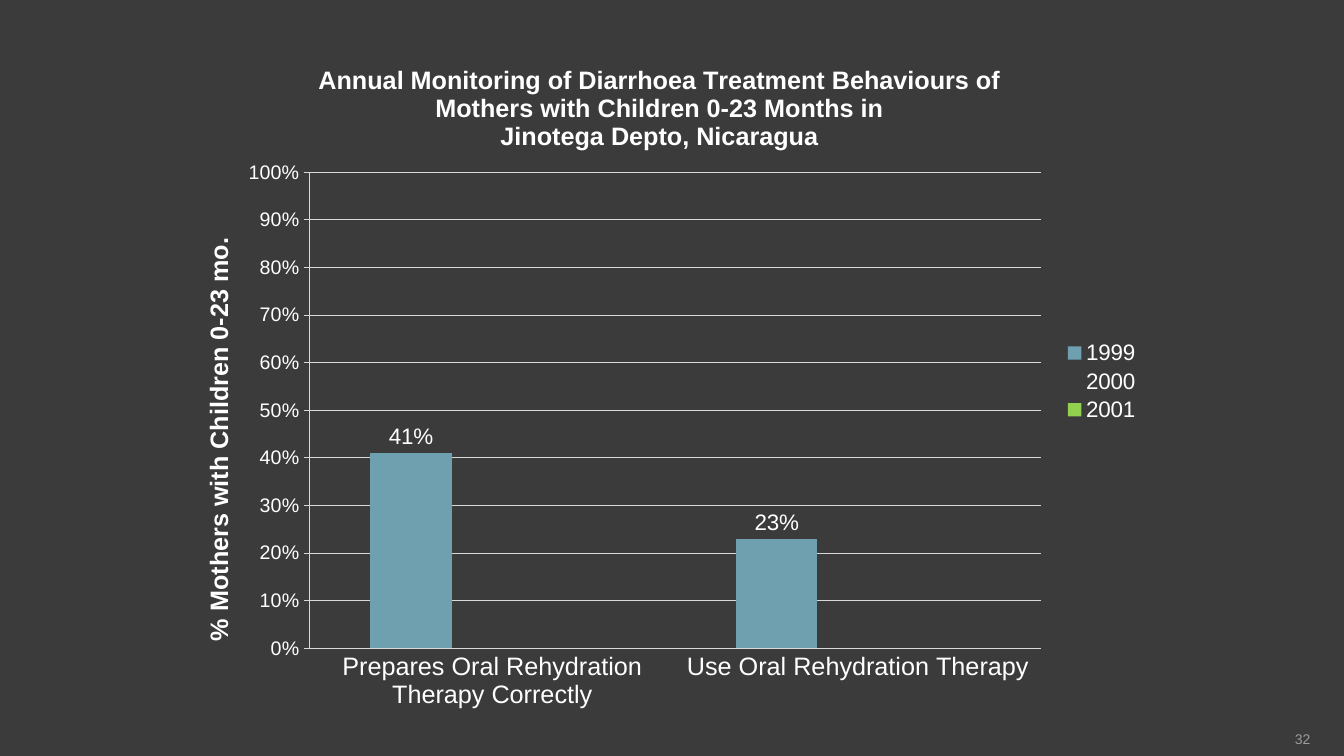
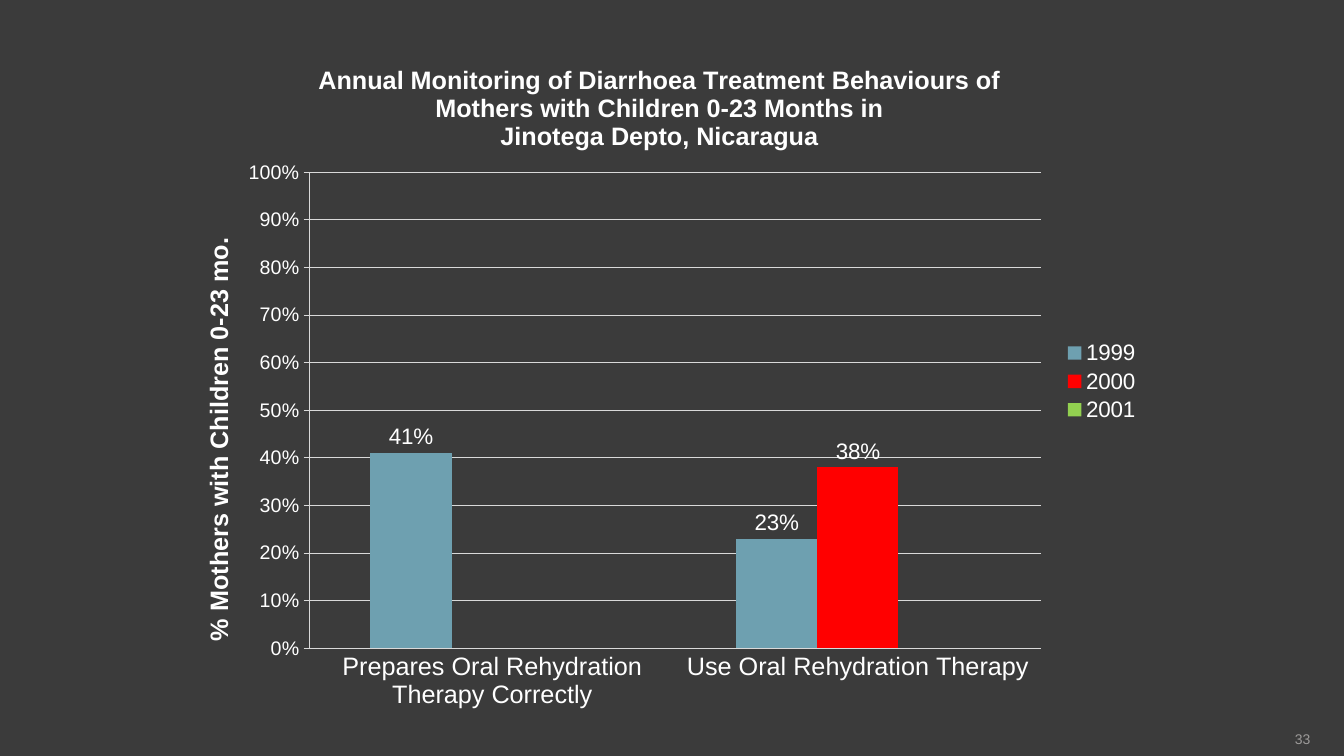
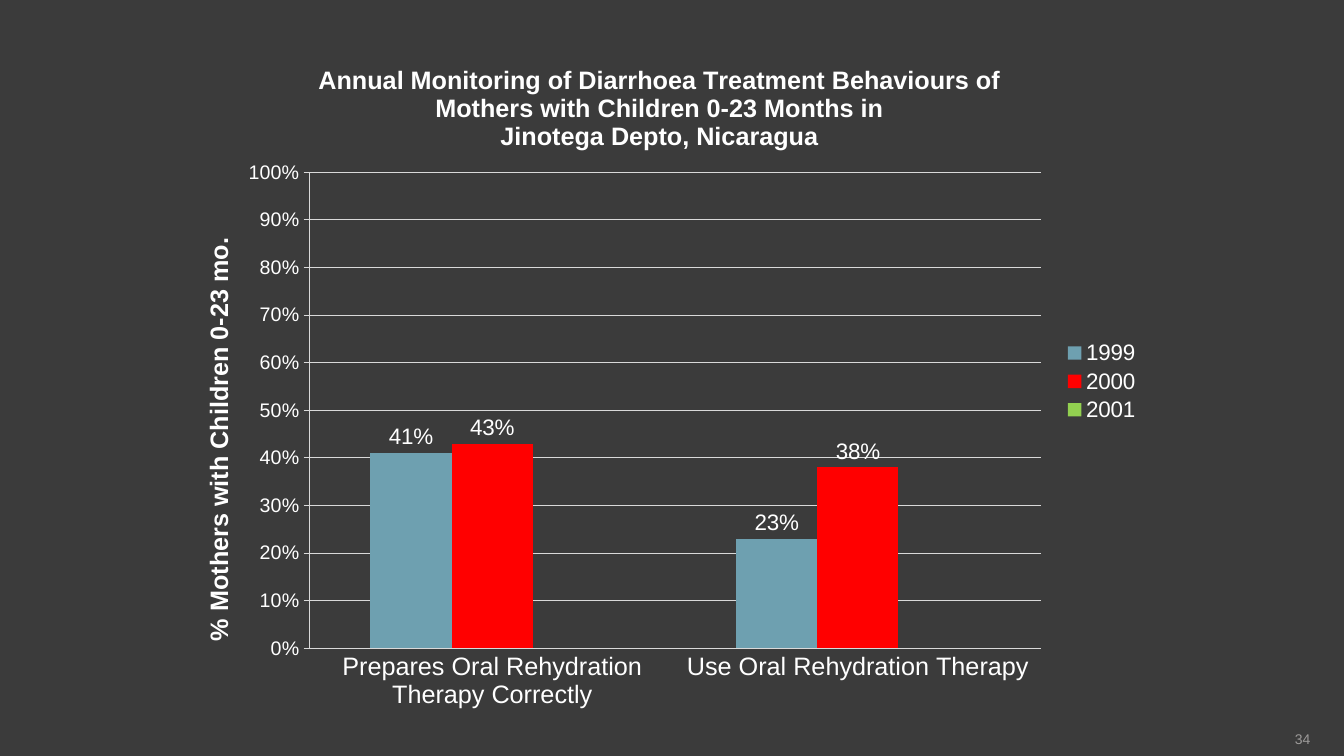
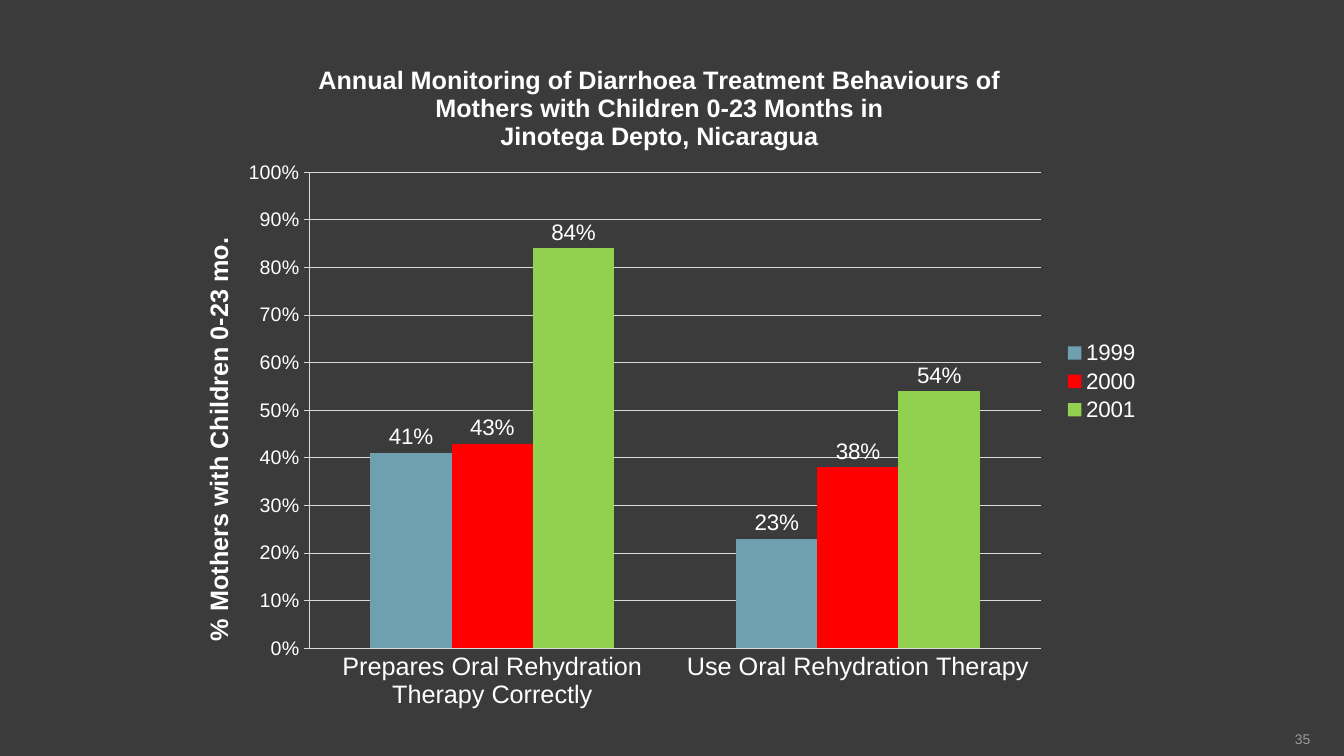
from lxml import etree
from pptx import Presentation
from pptx import util as u
from pptx.chart.data import CategoryChartData
from pptx.dml.color import RGBColor
from pptx.enum import chart as ch, text
from pptx.oxml.ns import qn

DARK = RGBColor(0x3B, 0x3B, 0x3B)
WHITE = RGBColor(0xFF, 0xFF, 0xFF)
GREY = RGBColor(0x9D, 0x9B, 0x9A)
RULE = RGBColor(0xD9, 0xD9, 0xD9)
BLUE = RGBColor(0x6E, 0xA0, 0xB0)
RED = RGBColor(0xFF, 0x00, 0x00)
GREEN = RGBColor(0x92, 0xD0, 0x50)

FONT = "Arial"
COLS, ROWS = 80, 45
FIRST = 32
TITLE = ("Annual Monitoring of Diarrhoea Treatment Behaviours of "
         "Mothers with Children 0-23 Months in\nJinotega Depto, Nicaragua")
SIDE = "% Mothers with Children 0-23 mo."
CATS = ("Prepares Oral Rehydration Therapy Correctly",
        "Use Oral Rehydration Therapy")
YEARS = ("1999", "2000", "2001")
BLANK = (None, None)
OLD, MID, NEW = (0.41, 0.23), (0.43, 0.38), (0.84, 0.54)

# Values by year, and the colour of the year 2000, for each slide
STEPS = (
    ((OLD, (None, 0.38), BLANK), None),
    ((OLD, (None, 0.38), BLANK), RED),
    ((OLD, MID, BLANK), RED),
    ((OLD, MID, NEW), RED),
)


def style(font, size, color=WHITE, bold=False):
    font.name = FONT
    font.size = u.Pt(size)
    font.bold = bold
    font.color.rgb = color


def write(frame, words, align=text.PP_ALIGN.CENTER, **form):
    frame.text = words
    for para in frame.paragraphs:
        para.alignment = align
        for run in para.runs:
            style(run.font, **form)


def place(part, x, y, w=None, h=None):
    """Fix a chart part at shares of the chart's size."""
    for old in part.findall(qn("c:layout")):
        part.remove(old)
    lay = etree.Element(qn("c:layout"))
    man = etree.SubElement(lay, qn("c:manualLayout"))
    sized = w is not None
    if sized and part.tag == qn("c:plotArea"):
        etree.SubElement(man, qn("c:layoutTarget")).set("val", "inner")
    for key in ("xMode", "yMode"):
        etree.SubElement(man, qn("c:" + key)).set("val", "edge")
    for key, val in zip("xywh", (x, y, w, h)):
        if val is not None:
            etree.SubElement(man, qn("c:" + key)).set("val", str(val))
    lead = part.xpath("./c:tx | ./c:legendPos")
    part.insert(len(lead), lay)


class Deck:
    def __init__(self):
        self.prs = Presentation()
        self.prs.slide_width = u.Inches(13.33)
        self.prs.slide_height = u.Inches(7.5)
        fill = self.prs.slide_master.background.fill
        fill.solid()
        fill.fore_color.rgb = DARK
        self.slide = None

    def box(self, col, row, wide, high):
        """Turn grid units into lengths."""
        dx = self.prs.slide_width / COLS
        dy = self.prs.slide_height / ROWS
        return [u.Emu(round(n)) for n in
                (col * dx, row * dy, wide * dx, high * dy)]

    def page(self, num):
        self.slide = self.prs.slides.add_slide(self.prs.slide_layouts[6])
        frame = self.slide.shapes.add_textbox(
            *self.box(71.33, 42.1, 6.67, 2.4)).text_frame
        frame.margin_left = frame.margin_right = 0
        frame.margin_top = frame.margin_bottom = 0
        frame.word_wrap = True
        frame.vertical_anchor = text.MSO_ANCHOR.BOTTOM
        write(frame, str(num), align=text.PP_ALIGN.RIGHT, size=10, color=GREY)

    def chart(self, rows, mid):
        data = CategoryChartData(number_format="0%")
        data.categories = CATS
        for year, vals in zip(YEARS, rows):
            data.add_series(year, vals)
        chart = self.slide.shapes.add_chart(
            ch.XL_CHART_TYPE.COLUMN_CLUSTERED,
            *self.box(10, 2, 58.5, 41), data).chart
        style(chart.font, 10)
        chart.has_title = True
        write(chart.chart_title.text_frame, TITLE, size=18, bold=True)
        chart.has_legend = True
        chart.legend.position = ch.XL_LEGEND_POSITION.RIGHT
        chart.legend.include_in_layout = False
        style(chart.legend.font, 16)
        self.axes(chart)
        self.bars(chart.plots[0], (BLUE, mid, GREEN))

        root = chart.element
        place(root.xpath("c:chart/c:title")[0], 0.15, 0.04)
        place(root.xpath(".//c:valAx/c:title")[0], 0.03, 0.29)
        place(root.xpath(".//c:plotArea")[0], 0.144, 0.2015, 0.744, 0.691)
        place(root.xpath(".//c:legend")[0], 0.91, 0.44, 0.08, 0.13)

    def axes(self, chart):
        cat, val = chart.category_axis, chart.value_axis
        for axis, size in ((cat, 18), (val, 14)):
            style(axis.tick_labels.font, size)
            axis.format.line.color.rgb = RULE
            axis.format.line.width = u.Pt(0.75)
        cat.major_tick_mark = ch.XL_TICK_MARK.NONE
        val.major_tick_mark = ch.XL_TICK_MARK.OUTSIDE
        val.minimum_scale, val.maximum_scale, val.major_unit = 0, 1, 0.1
        val.tick_labels.number_format = "0%"
        val.tick_labels.number_format_is_linked = False
        val.has_major_gridlines = True
        line = val.major_gridlines.format.line
        line.color.rgb = RULE
        line.width = u.Pt(0.75)
        val.has_title = True
        write(val.axis_title.text_frame, SIDE, size=18, bold=True)
        body = chart.element.xpath(".//c:valAx/c:title//a:bodyPr")[0]
        body.set("rot", "-5400000")
        body.set("vert", "horz")

    def bars(self, plot, colors):
        plot.gap_width = 150
        plot.overlap = 0
        plot.vary_by_categories = False
        for ser, color in zip(plot.series, colors):
            ser.invert_if_negative = False
            if color is None:
                ser.format.fill.background()
                continue
            ser.format.fill.solid()
            ser.format.fill.fore_color.rgb = color
            labels = ser.data_labels
            labels.show_value = True
            labels.number_format = "0%"
            labels.number_format_is_linked = False
            labels.position = ch.XL_LABEL_POSITION.OUTSIDE_END
            style(labels.font, 16)


def main():
    deck = Deck()
    for num, (rows, mid) in enumerate(STEPS, FIRST):
        deck.page(num)
        deck.chart(rows, mid)
    deck.prs.save("out.pptx")


if __name__ == "__main__":
    main()
